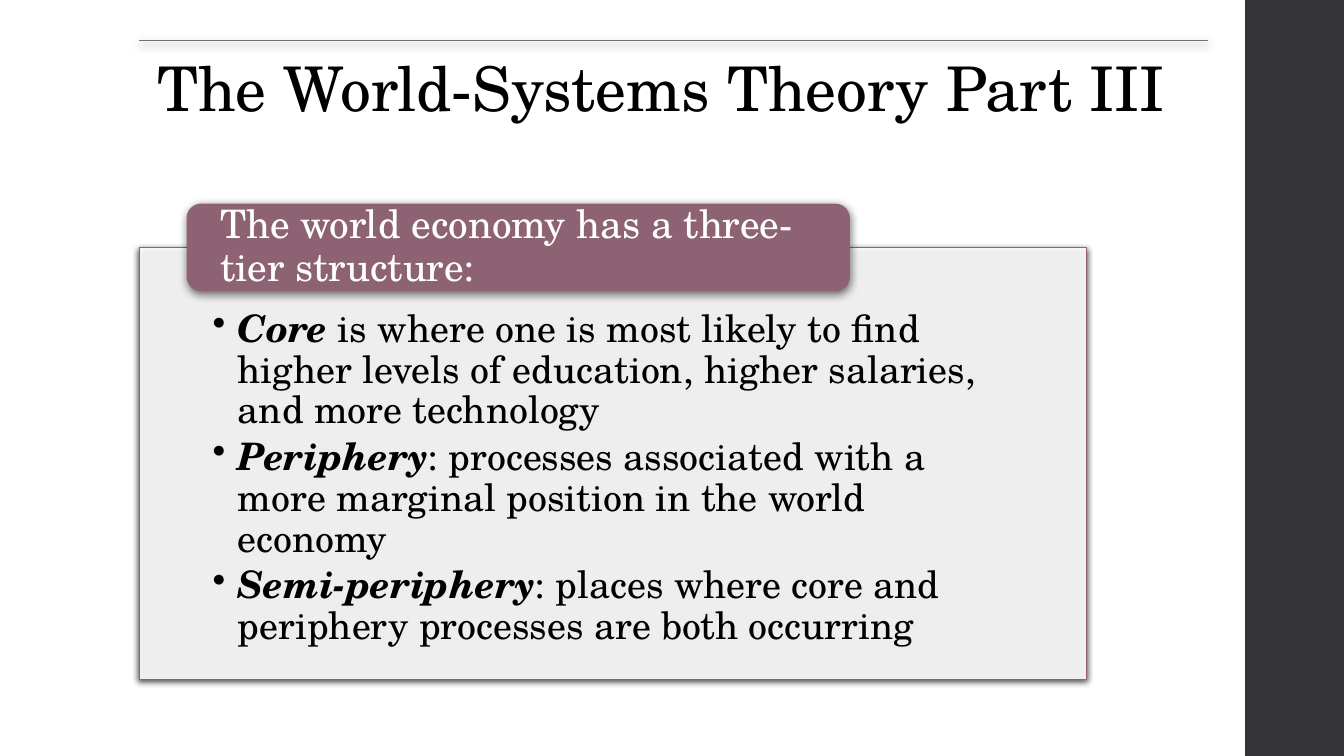
from lxml import etree
from pptx import Presentation
from pptx.dml.color import RGBColor
from pptx.enum.shapes import MSO_CONNECTOR, MSO_SHAPE
from pptx.enum.text import MSO_ANCHOR, PP_ALIGN
from pptx.oxml.ns import qn
from pptx.util import Inches, Pt

RECT, ROUNDED = MSO_SHAPE.RECTANGLE, MSO_SHAPE.ROUNDED_RECTANGLE
STRAIGHT = MSO_CONNECTOR.STRAIGHT
TOP, MIDDLE = MSO_ANCHOR.TOP, MSO_ANCHOR.MIDDLE
LEFT = PP_ALIGN.LEFT

# Content
TITLE = "The World-Systems Theory Part III"
HEADING = "The world economy has a three-tier structure:"
TIERS = [
    ("Core", " is where one is most likely to find higher levels of education, "
             "higher salaries, and more technology"),
    ("Periphery", ": processes associated with a more marginal position in the world economy"),
    ("Semi-periphery", ": places where core and periphery processes are both occurring"),
]

# Style and layout, in inches and points
FONT = "TeX Gyre Schola"
BLACK, WHITE, MAUVE, GREY, DARK = "000000", "FFFFFF", "8D6374", "6F6F74", "353537"
WIDTH, HEIGHT = 13.33, 7.5
MARGIN = 1.38
SIDEBAR = (12.35, 0, 1, HEIGHT)
TITLE_BOX = (MARGIN, 0.4, 10.6, 1.45)
PANEL = (MARGIN, 2.46, 9.4, 4.28)
HEADING_BOX = (1.85, 2.02, 6.58, 0.87)
INDENT = 0.25


def color(value):
    return RGBColor.from_string(value)


def add_child(parent, tag, **attributes):
    return etree.SubElement(parent, qn(tag), {key: str(value) for key, value in attributes.items()})


def add_shadow(item, opacity, blur, distance):
    effects = add_child(item._element.spPr, "a:effectLst")
    shadow = add_child(effects, "a:outerShdw", blurRad=Pt(blur), dist=Pt(distance),
                       dir=90 * 60000, algn="ctr", rotWithShape=0)
    tone = add_child(shadow, "a:srgbClr", val=BLACK)
    add_child(tone, "a:alpha", val=opacity * 1000)


def add_box(kind, place, fill, line=None):
    box = page.shapes.add_shape(kind, *map(Inches, place))
    box.shadow.inherit = False
    box.fill.solid()
    box.fill.fore_color.rgb = color(fill)
    if line:
        box.line.color.rgb = color(line)
        box.line.width = Pt(0.75)
    else:
        box.line.fill.background()
    return box


def shade(box, opacity, blur, distance):
    box._element.spPr.remove(box._element.spPr.find(qn("a:effectLst")))
    add_shadow(box, opacity, blur, distance)


def write(box, paragraphs, size, tone, insets, anchor=TOP, bullets=False):
    frame = box.text_frame
    sides = ("margin_left", "margin_top", "margin_right", "margin_bottom")
    settings = dict(zip(sides, map(Inches, insets)), word_wrap=True, vertical_anchor=anchor)
    for name, value in settings.items():
        setattr(frame, name, value)
    for index, spans in enumerate(paragraphs):
        para = frame.add_paragraph() if index else frame.paragraphs[0]
        para.alignment, para.line_spacing = LEFT, 0.9
        if bullets:
            para.space_after = Pt(4)
            properties = para._p.get_or_add_pPr()
            properties.set("marL", str(Inches(INDENT)))
            properties.set("indent", str(-Inches(INDENT)))
            add_child(properties, "a:buChar", char="•")
        for text, strong in spans:
            span = para.add_run()
            span.text = text
            style = {"name": FONT, "size": Pt(size), "bold": strong, "italic": strong}
            for name, value in style.items():
                setattr(span.font, name, value)
            span.font.color.rgb = color(tone)


deck = Presentation()
deck.slide_width, deck.slide_height = Inches(WIDTH), Inches(HEIGHT)
page = deck.slides.add_slide(deck.slide_layouts[6])

# Sidebar
add_box(RECT, SIDEBAR, DARK)

# Title under a rule
left, top, width, _ = TITLE_BOX
rule = page.shapes.add_connector(STRAIGHT, *map(Inches, (left, top, left + width, top)))
rule.line.color.rgb = color(GREY)
rule.line.width = Pt(0.75)
add_shadow(rule, 55, 6, 2)
title = page.shapes.add_textbox(*map(Inches, TITLE_BOX))
write(title, [[(TITLE, False)]], 44, BLACK, [0.18] * 4)

# Panel with the three tiers
panel = add_box(RECT, PANEL, WHITE, MAUVE)
add_child(panel._element.spPr.find(qn("a:solidFill"))[0], "a:alpha", val=90000)
shade(panel, 75, 4, 1.2)
tiers = [[(term, True), (meaning, False)] for term, meaning in TIERS]
write(panel, tiers, 27, BLACK, (0.73, 0.61, 0.73, 0.21), bullets=True)

# Heading over the panel's top edge
heading = add_box(ROUNDED, HEADING_BOX, MAUVE)
shade(heading, 55, 6, 2)
write(heading, [[(HEADING, False)]], 28, WHITE, (0.29, 0.04, 0.29, 0.04), MIDDLE)

deck.save("out.pptx")
